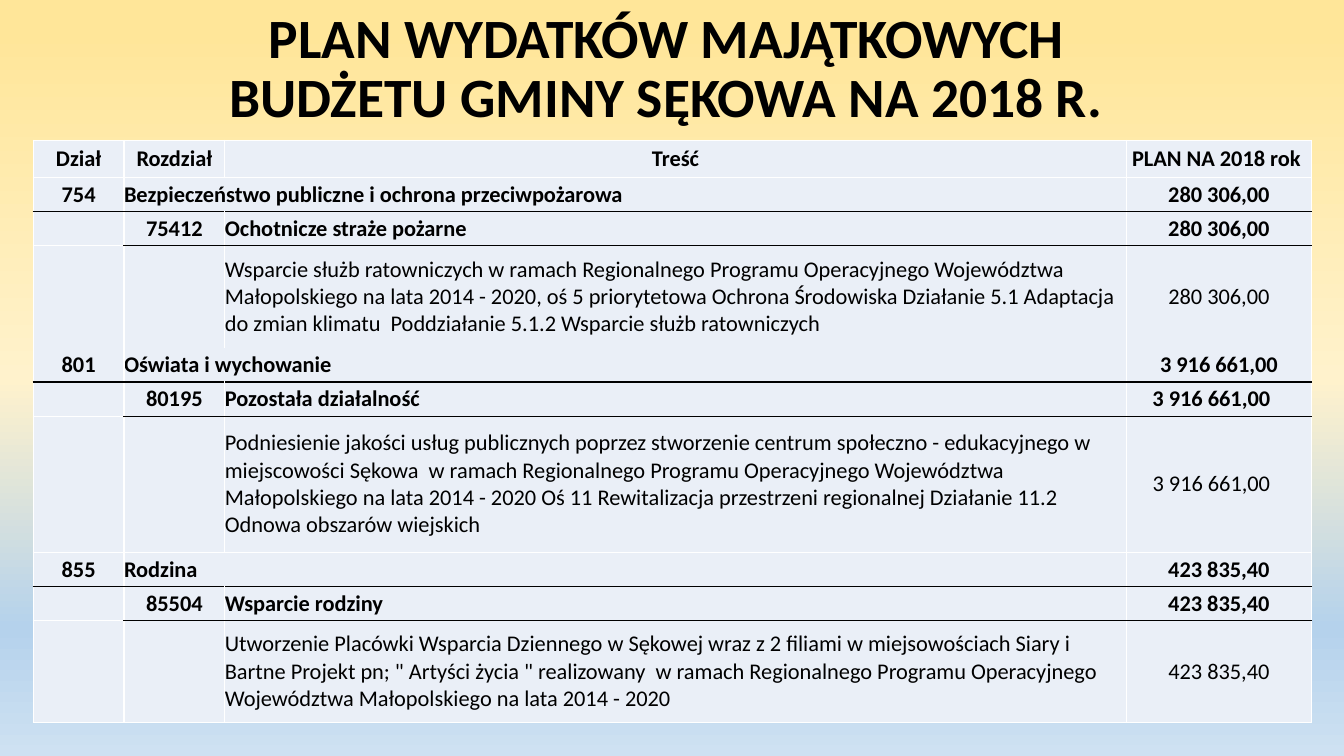
from lxml import etree
from pptx import Presentation
from pptx import util as u
from pptx.dml.color import RGBColor
from pptx.enum import text
from pptx.oxml import parse_xml
from pptx.oxml.ns import nsdecls, qn

C = {"black": "000000", "white": "FFFFFF", "cell": "EAEFF7"}
GRADIENT = {4: "FFE699", 50: "FFF2CC", 83: "B5D2EC", 100: "CEE1F2"}
FONT = "Calibri"


def format_run(r, size, bold):
    for name, value in {"name": FONT, "size": u.Pt(size), "bold": bold}.items():
        setattr(r.font, name, value)
    r.font.color.rgb = RGBColor.from_string(C["black"])


def set_border(cell, side, color):
    """Draw one cell edge; a colour of None leaves the edge empty."""
    ln = etree.SubElement(cell._tc.get_or_add_tcPr(), qn(f"a:ln{side}"), w=str(u.Pt(1)))
    if color:
        fill = etree.SubElement(ln, qn("a:solidFill"))
        etree.SubElement(fill, qn("a:srgbClr"), val=C[color])
    else:
        etree.SubElement(ln, qn("a:noFill"))


prs = Presentation()
prs.slide_width, prs.slide_height = u.Inches(13.33), u.Inches(7.5)
s = prs.slides.add_slide(prs.slide_layouts[5])

# Background gradient, top to bottom
stops = "".join(f'<a:gs pos="{pos * 1000}"><a:srgbClr val="{color}"/></a:gs>'
                for pos, color in GRADIENT.items())
s._element.cSld.insert(0, parse_xml(
    f'<p:bg {nsdecls("p", "a")}><p:bgPr><a:gradFill rotWithShape="1"><a:gsLst>{stops}</a:gsLst>'
    '<a:lin ang="5400000" scaled="0"/></a:gradFill><a:effectLst/></p:bgPr></p:bg>'))

# Title
title = s.shapes.title
title.left, title.top = u.Inches(0.33), u.Inches(0)
title.width, title.height = u.Inches(12.68), u.Inches(1.39)
tf = title.text_frame
tf.text = "PLAN WYDATKÓW MAJĄTKOWYCH \vBUDŻETU GMINY SĘKOWA NA 2018 R. "
tf.auto_size = text.MSO_AUTO_SIZE.NONE
tf.vertical_anchor = text.MSO_ANCHOR.MIDDLE
p = tf.paragraphs[0]
p.alignment, p.line_spacing = text.PP_ALIGN.CENTER, 0.9
for r in p.runs:
    format_run(r, 39.6, True)

# Table rows: kind, height, cell texts
ROWS = [
    ("head", 0.37, ["Dział", "Rozdział", "Treść", "PLAN NA 2018 rok "]),
    ("section", 0.34, ["754", "Bezpieczeństwo publiczne i ochrona przeciwpożarowa", "", "280 306,00"]),
    ("chapter", 0.34, ["", "75412", "Ochotnicze straże pożarne", "280 306,00"]),
    ("detail", 1.01, ["", "", "Wsparcie służb ratowniczych w ramach Regionalnego Programu Operacyjnego "
                      "Województwa Małopolskiego na lata 2014 - 2020, oś 5 priorytetowa Ochrona "
                      "Środowiska Działanie 5.1 Adaptacja do zmian klimatu  Poddziałanie 5.1.2 "
                      "Wsparcie służb ratowniczych", "280 306,00"]),
    ("section", 0.34, ["801", "Oświata i wychowanie", "", "3 916 661,00"]),
    ("chapter", 0.34, ["", "80195", "Pozostała działalność", "3 916 661,00"]),
    ("detail", 1.35, ["", "", "Podniesienie jakości usług publicznych poprzez stworzenie centrum "
                      "społeczno - edukacyjnego w miejscowości Sękowa  w ramach Regionalnego "
                      "Programu Operacyjnego Województwa Małopolskiego na lata 2014 - 2020 Oś 11 "
                      "Rewitalizacja przestrzeni regionalnej Działanie 11.2 Odnowa obszarów "
                      "wiejskich", "3 916 661,00"]),
    ("section", 0.34, ["855", "Rodzina", "", "423 835,40"]),
    ("chapter", 0.34, ["", "85504", "Wsparcie rodziny", "423 835,40"]),
    ("detail", 1.01, ["", "", "Utworzenie Placówki Wsparcia Dziennego w Sękowej wraz z 2 filiami w "
                      "miejsowościach Siary i Bartne Projekt pn; \" Artyści życia \" realizowany  w "
                      "ramach Regionalnego Programu Operacyjnego Województwa Małopolskiego na lata "
                      "2014 - 2020", "423 835,40"]),
]
WIDTHS = [0.9, 1, 8.94, 1.84]
OPEN_EDGE = 4  # no line between the first detail row and the section below it

table = s.shapes.add_table(len(ROWS), len(WIDTHS), u.Inches(0.33), u.Inches(1.39),
                           u.Inches(12.68), u.Inches(5.78)).table
table.first_row = table.horz_banding = False
for col, width in zip(table.columns, WIDTHS):
    col.width = u.Inches(width)

# Colour of the line above each row; the last entry closes the table
edges = []
for i in range(len(ROWS) + 1):
    above = ROWS[i - 1][0] if i else None
    edges.append(["black" if above == "section" or (above == "chapter" and j > 0)
                  else None if i == OPEN_EDGE else "white" for j in range(len(WIDTHS))])

for i, (kind, height, texts) in enumerate(ROWS):
    table.rows[i].height = u.Inches(height)
    for j, words in enumerate(texts):
        cell = table.cell(i, j)
        for side in ("left", "right", "top", "bottom"):
            setattr(cell, f"margin_{side}", 0)
        cell.vertical_anchor = text.MSO_ANCHOR.MIDDLE
        for side, color in {"L": "white", "R": "white",
                            "T": edges[i][j], "B": edges[i + 1][j]}.items():
            set_border(cell, side, color)
        cell.fill.solid()
        cell.fill.fore_color.rgb = RGBColor.from_string(C["cell"])
        if not words:
            continue
        p = cell.text_frame.paragraphs[0]
        is_label = kind != "head" and j == (1 if kind == "section" else 2)
        p.alignment = text.PP_ALIGN.LEFT if is_label else text.PP_ALIGN.CENTER
        r = p.add_run()
        r.text = words
        format_run(r, 16, kind != "detail")
        if words == "3 916 661,00" and kind != "section":
            cell.margin_right = u.Inches(0.15)
    if kind == "section":
        table.cell(i, 1).merge(table.cell(i, 2))

prs.save("out.pptx")
